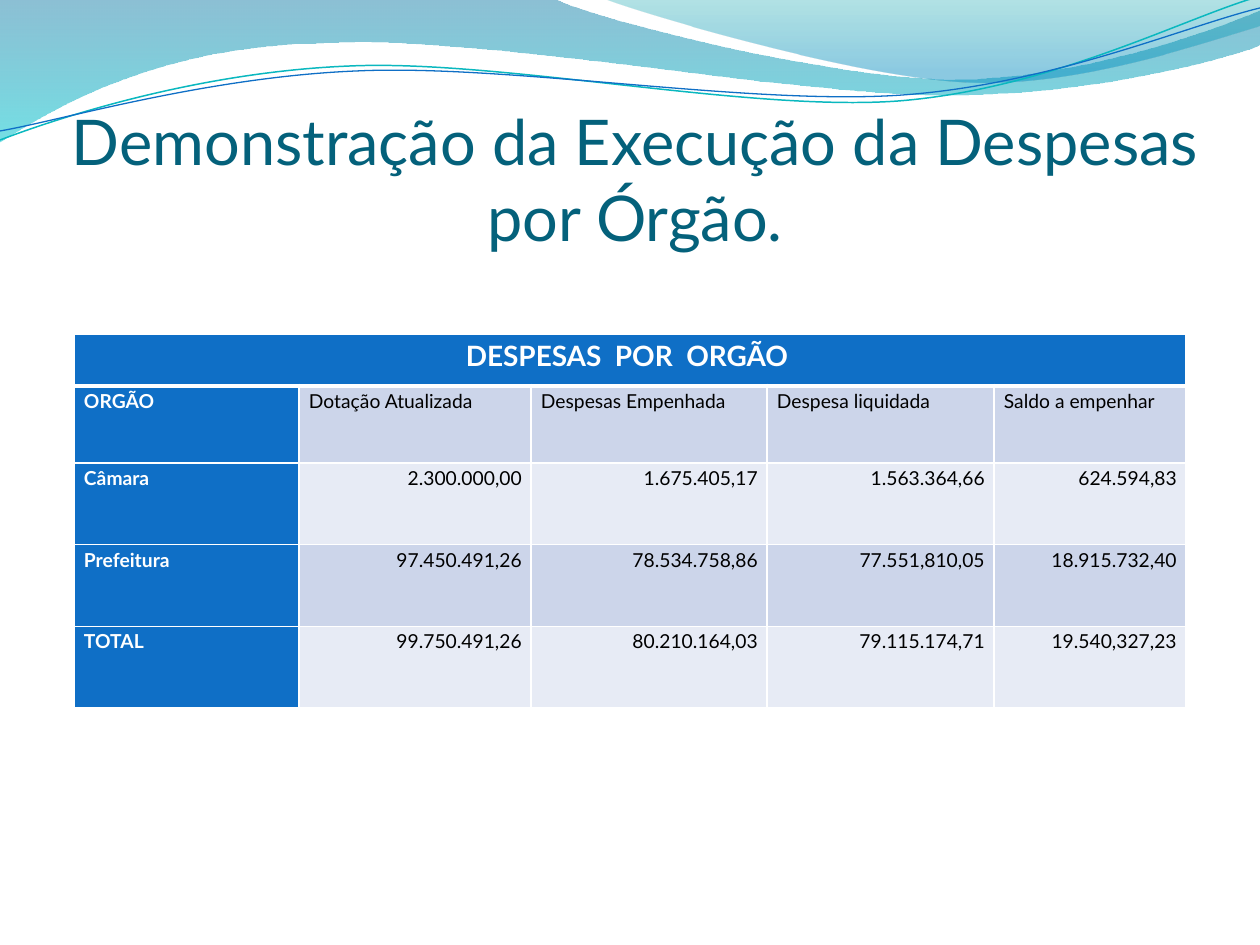
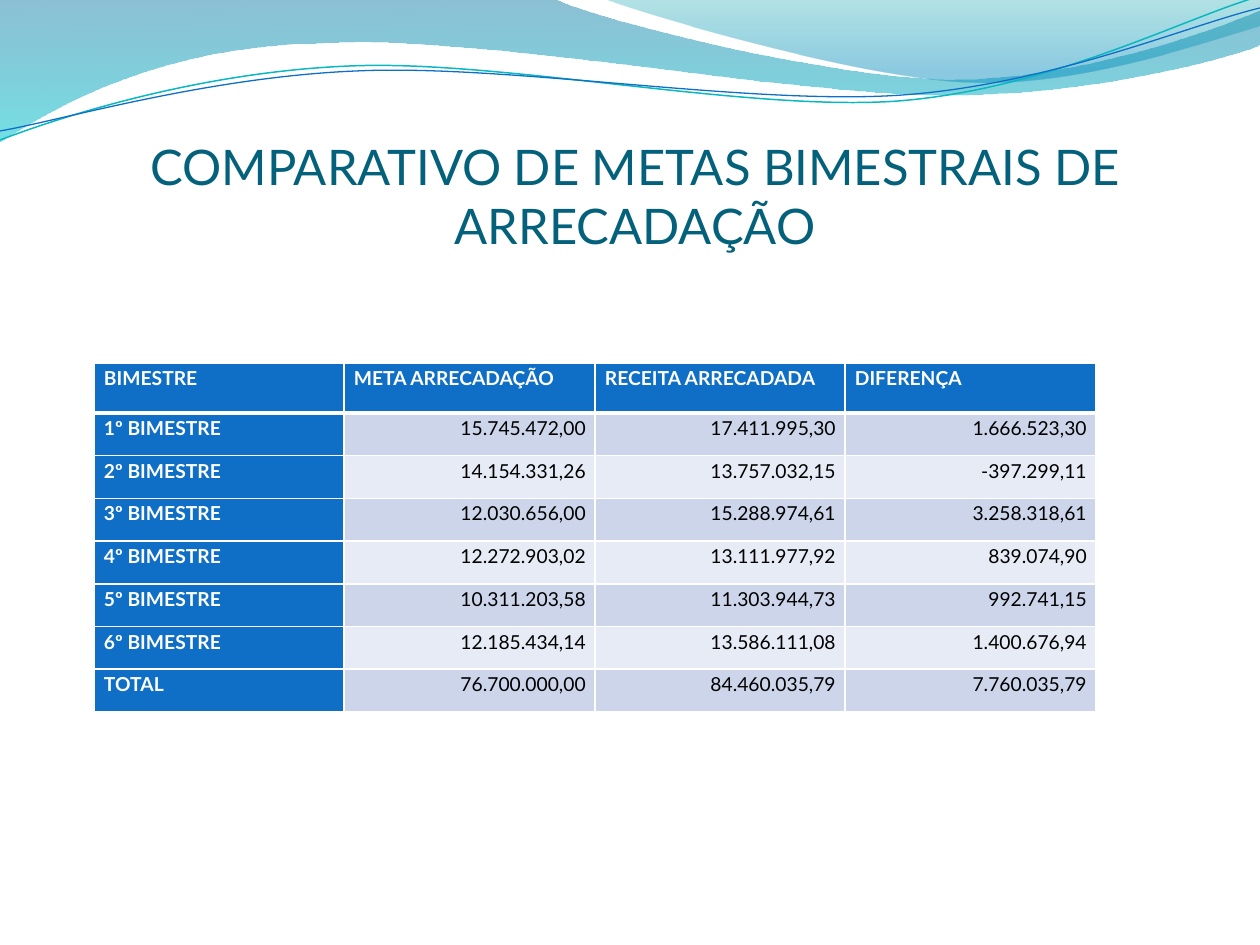
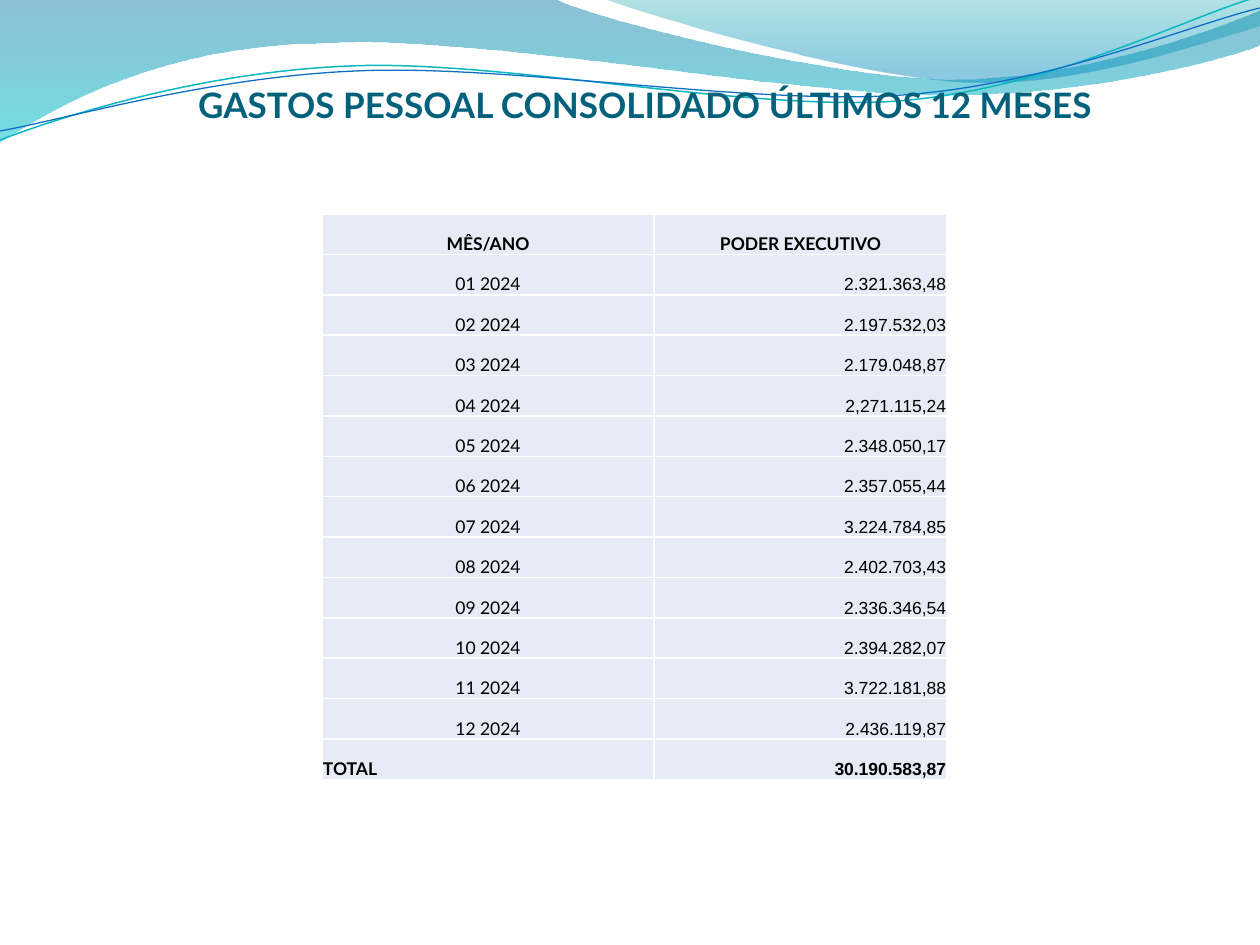
from lxml.etree import SubElement
from pptx import Presentation
from pptx.dml.color import RGBColor
from pptx.enum.text import MSO_ANCHOR, MSO_AUTO_SIZE, PP_ALIGN
from pptx.oxml.ns import qn
from pptx.util import Emu, Pt

PX = 914400 / 126
LATO, ARIAL = "Lato", "Arial"

TEAL = RGBColor(0x04, 0x61, 0x7B)
BLUE = RGBColor(0x0F, 0x6F, 0xC6)
AQUA = RGBColor(0x0A, 0xB8, 0xBF)
BAND_DARK = RGBColor(0xCC, 0xD5, 0xEA)
BAND_LIGHT = RGBColor(0xE7, 0xEB, 0xF5)
WHITE = RGBColor(0xFF, 0xFF, 0xFF)
BLACK = RGBColor(0x00, 0x00, 0x00)

# Outlines in px: one point is a corner, three points are a Bézier segment.
# Gradient stops: position, colour, opacity in percent.
RIBBONS = [
    {"outline": [[(0, 0)], [(554, -1)],
                 [(600, 21), (837, 79), (955, 79)],
                 [(1075, 79), (1207, 33), (1260, 11)],
                 [(1261, 45)],
                 [(1239, 55), (1096, 96), (940, 95)],
                 [(784, 94), (481, 35), (324, 43)],
                 [(163, 45), (58, 105), (-1, 142)],
                 [(0, 0)]],
     "stops": [(0, RGBColor(0x00, 0x74, 0xA1), 45),
               (1, RGBColor(0x00, 0xC6, 0xCF), 55)]},
    {"outline": [[(604, -1)],
                 [(641, 14), (859, 78), (969, 82)],
                 [(1079, 87), (1211, 40), (1260, 26)],
                 [(1260, 0)], [(604, -1)]],
     "stops": [(0, RGBColor(0x00, 0xA1, 0xA9), 30),
               (0.8, RGBColor(0x00, 0x8B, 0xBF), 45)]},
]
STRANDS = [
    {"outline": [[(0, 140)],
                 [(60, 117), (199, 72), (349, 66)],
                 [(498, 59), (747, 112), (898, 101)],
                 [(1050, 89), (1182, 19), (1257, -3)]],
     "color": AQUA, "width": 0.85},
    {"outline": [[(0, 131)],
                 [(59, 121), (207, 77), (357, 71)],
                 [(508, 64), (752, 106), (903, 95)],
                 [(1053, 84), (1186, 26), (1260, 8)]],
     "color": BLUE, "width": 0.75},
]

AGENCY_ROWS = [
    ("DESPESAS  POR  ORGÃO ", "", "", "", ""),
    ("ORGÃO", "Dotação Atualizada", "Despesas Empenhada", "Despesa liquidada",
     "Saldo a empenhar"),
    ("Câmara", "2.300.000,00", "1.675.405,17", "1.563.364,66", "624.594,83"),
    ("Prefeitura", "97.450.491,26", "78.534.758,86", "77.551,810,05", "18.915.732,40"),
    ("TOTAL", "99.750.491,26", "80.210.164,03", "79.115.174,71", "19.540,327,23"),
]
TARGET_ROWS = [
    ("BIMESTRE", "META ARRECADAÇÃO", "RECEITA ARRECADADA", "DIFERENÇA"),
    ("1º BIMESTRE", "15.745.472,00", "17.411.995,30", "1.666.523,30"),
    ("2º BIMESTRE", "14.154.331,26", "13.757.032,15", "-397.299,11"),
    ("3º BIMESTRE", "12.030.656,00", "15.288.974,61", "3.258.318,61"),
    ("4º BIMESTRE", "12.272.903,02", "13.111.977,92", "839.074,90"),
    ("5º BIMESTRE", "10.311.203,58", "11.303.944,73", "992.741,15"),
    ("6º BIMESTRE", "12.185.434,14", "13.586.111,08", "1.400.676,94"),
    ("TOTAL", "76.700.000,00", "84.460.035,79", "7.760.035,79"),
]
MONTHLY_SPENDING = [
    "2.321.363,48", "2.197.532,03", "2.179.048,87", "2,271.115,24",
    "2.348.050,17", "2.357.055,44", "3.224.784,85", "2.402.703,43",
    "2.336.346,54", "2.394.282,07", "3.722.181,88", "2.436.119,87",
]
STAFF_ROWS = [
    ("MÊS/ANO", "PODER EXECUTIVO"),
    *((f"{month:02} 2024", spent) for month, spent in enumerate(MONTHLY_SPENDING, 1)),
    ("TOTAL", "30.190.583,87"),
]


def banded_look(row, col, heading_rows):
    """Blue first row and first column, banded body, figures to the right."""
    blue = row == 0 or col == 0
    band = BAND_DARK if row % 2 else BAND_LIGHT
    right = col > 0 and row >= heading_rows
    return {
        "fill": BLUE if blue else band,
        "align": PP_ALIGN.RIGHT if right else PP_ALIGN.LEFT,
        "spacing": 1.15,
        "font": {"name": LATO, "size": Pt(11), "bold": blue},
        "color": WHITE if blue else BLACK,
    }


def agency_look(row, col):
    look = banded_look(row, col, heading_rows=2)
    if row == 0:
        look["align"] = PP_ALIGN.CENTER
        look["font"]["size"] = Pt(16)
    return look


def target_look(row, col):
    return banded_look(row, col, heading_rows=1)


def staff_look(row, col):
    total = len(STAFF_ROWS) - 1
    if row > 0 and col == 1:
        align = PP_ALIGN.RIGHT
    else:
        align = PP_ALIGN.LEFT if row == total else PP_ALIGN.CENTER
    return {
        "fill": BAND_LIGHT,
        "align": align,
        "spacing": 1.0,
        "font": {"name": ARIAL if row > 0 and col == 1 else LATO,
                 "size": Pt(10), "bold": row in (0, total)},
        "color": BLACK,
    }


BANDED_CELL = {"margin_left": 10, "margin_top": 0, "margin_right": 9, "margin_bottom": 0}
STAFF_CELL = {"margin_left": 1, "margin_top": 1, "margin_right": 1, "margin_bottom": 0}

# "first_rows" fixes the leading row heights; the others share what is left.
SLIDES = [
    {"title": "Demonstração da Execução da Despesas por Órgão.",
     "title_box": (63, 97, 1144, 157), "title_font": {"size": Pt(36), "bold": False},
     "rows": AGENCY_ROWS, "corner": (74, 334), "columns": [225, 232, 236, 227, 192],
     "height": 374, "first_rows": [52, 77], "look": agency_look, "margins": BANDED_CELL,
     "anchor": MSO_ANCHOR.TOP, "header_rule": 3, "merge_header": True},
    {"title": "COMPARATIVO DE METAS BIMESTRAIS DE ARRECADAÇÃO",
     "title_box": (63, 97, 1144, 157), "title_font": {"size": Pt(28), "bold": False},
     "rows": TARGET_ROWS, "corner": (94, 363), "columns": [250, 251, 250, 251],
     "height": 349, "first_rows": [50], "look": target_look, "margins": BANDED_CELL,
     "anchor": MSO_ANCHOR.TOP, "header_rule": 3, "merge_header": False},
    {"title": "GASTOS PESSOAL CONSOLIDADO ÚLTIMOS 12 MESES",
     "title_box": (73, 87, 1144, 39), "title_font": {"size": Pt(20), "bold": True},
     "rows": STAFF_ROWS, "corner": (322, 214), "columns": [332, 293],
     "height": 566, "first_rows": [], "look": staff_look, "margins": STAFF_CELL,
     "anchor": MSO_ANCHOR.BOTTOM, "header_rule": 1, "merge_header": False},
]


def px(length):
    return Emu(round(length * PX))


def assign(target, values):
    for name, value in values.items():
        setattr(target, name, value)


def draw_outline(slide, outline, close):
    """Build a freeform and bend each run of three points into one curve."""
    start, *others = [(px(x), px(y)) for part in outline for x, y in part]
    builder = slide.shapes.build_freeform(*start, scale=1.0)
    builder.add_line_segments(others, close=close)
    shape = builder.convert_to_shape()
    shape.shadow.inherit = False
    segments = iter(list(shape.element.iter(qn("a:lnTo"))))
    for part in outline[1:]:
        segment = next(segments)
        if len(part) == 3:
            segment.tag = qn("a:cubicBezTo")
        for _ in part[1:]:
            extra = next(segments)
            segment.append(extra[0])
            extra.getparent().remove(extra)
    return shape


def draw_ribbon(slide, ribbon):
    shape = draw_outline(slide, ribbon["outline"], close=True)
    shape.line.fill.background()
    shape.fill.gradient()
    shape.fill.gradient_angle = 270
    for stop, (position, color, _) in zip(shape.fill.gradient_stops, ribbon["stops"]):
        stop.position = position
        stop.color.rgb = color
    stop_colors = shape.element.spPr.iter(qn("a:srgbClr"))
    for stop_color, (_, _, opacity) in zip(stop_colors, ribbon["stops"]):
        SubElement(stop_color, qn("a:alpha"), val=str(opacity * 1000))
    return shape


def draw_strand(slide, strand):
    shape = draw_outline(slide, strand["outline"], close=False)
    shape.fill.background()
    shape.line.color.rgb = strand["color"]
    shape.line.width = Pt(strand["width"])
    return shape


def decorate_master(master, slide):
    """Draw the waves on a slide and move them behind the master's placeholders."""
    waves = [draw_ribbon(slide, ribbon) for ribbon in RIBBONS]
    waves += [draw_strand(slide, strand) for strand in STRANDS]
    for index, wave in enumerate(waves, 2):
        master.shapes.element.insert(index, wave.element)


def set_title(slide, content):
    title = slide.shapes.title
    assign(title, dict(zip(("left", "top", "width", "height"),
                           map(px, content["title_box"]))))
    frame = title.text_frame
    frame.text = content["title"]
    assign(frame, {"margin_left": 0, "margin_top": px(6), "margin_right": 0,
                   "margin_bottom": 0, "word_wrap": True,
                   "auto_size": MSO_AUTO_SIZE.NONE,
                   "vertical_anchor": MSO_ANCHOR.BOTTOM})
    paragraph = frame.paragraphs[0]
    paragraph.alignment = PP_ALIGN.CENTER
    font = paragraph.runs[0].font
    assign(font, {"name": LATO, **content["title_font"]})
    font.color.rgb = TEAL


def fill_cell(cell, text, look):
    cell.fill.solid()
    cell.fill.fore_color.rgb = look["fill"]
    if not text:
        return
    cell.text = text
    paragraph = cell.text_frame.paragraphs[0]
    assign(paragraph, {"alignment": look["align"], "line_spacing": look["spacing"]})
    font = paragraph.runs[0].font
    assign(font, look["font"])
    font.color.rgb = look["color"]


def rule_cell(tc, row, header_rule):
    """Give a cell white borders, with the header rule under the first row."""
    widths = {"a:lnL": 1, "a:lnR": 1,
              "a:lnT": header_rule if row == 1 else 1,
              "a:lnB": header_rule if row == 0 else 1}
    properties = tc.get_or_add_tcPr()
    for index, (side, width) in enumerate(widths.items()):
        border = SubElement(properties, qn(side), w=str(Pt(width)))
        SubElement(SubElement(border, qn("a:solidFill")), qn("a:srgbClr"), val=str(WHITE))
        properties.insert(index, border)


def add_figures(slide, content):
    rows, columns, first_rows = content["rows"], content["columns"], content["first_rows"]
    shared = (content["height"] - sum(first_rows)) / (len(rows) - len(first_rows))
    heights = first_rows + [shared] * (len(rows) - len(first_rows))
    frame = slide.shapes.add_table(len(rows), len(columns), *map(px, content["corner"]),
                                   px(sum(columns)), px(content["height"]))
    table = frame.table
    assign(table, {"first_row": False, "horz_banding": False})
    for column, width in zip(table.columns, columns):
        column.width = px(width)
    for row, height in zip(table.rows, heights):
        row.height = px(height)
    margins = {name: px(margin) for name, margin in content["margins"].items()}
    for r, texts in enumerate(rows):
        for c, text in enumerate(texts):
            cell = table.cell(r, c)
            assign(cell, {**margins, "vertical_anchor": content["anchor"]})
            fill_cell(cell, text, content["look"](r, c))
    for index, tc in enumerate(frame.element.iter(qn("a:tc"))):
        rule_cell(tc, index // len(columns), content["header_rule"])
    if content["merge_header"]:
        table.cell(0, 0).merge(table.cell(0, len(columns) - 1))


def main():
    deck = Presentation()
    assign(deck, {"slide_width": px(1260), "slide_height": px(945)})
    title_only = deck.slide_layouts[5]
    for number, content in enumerate(SLIDES):
        slide = deck.slides.add_slide(title_only)
        if number == 0:
            decorate_master(deck.slide_master, slide)
        set_title(slide, content)
        add_figures(slide, content)
    deck.save("out.pptx")


if __name__ == "__main__":
    main()
